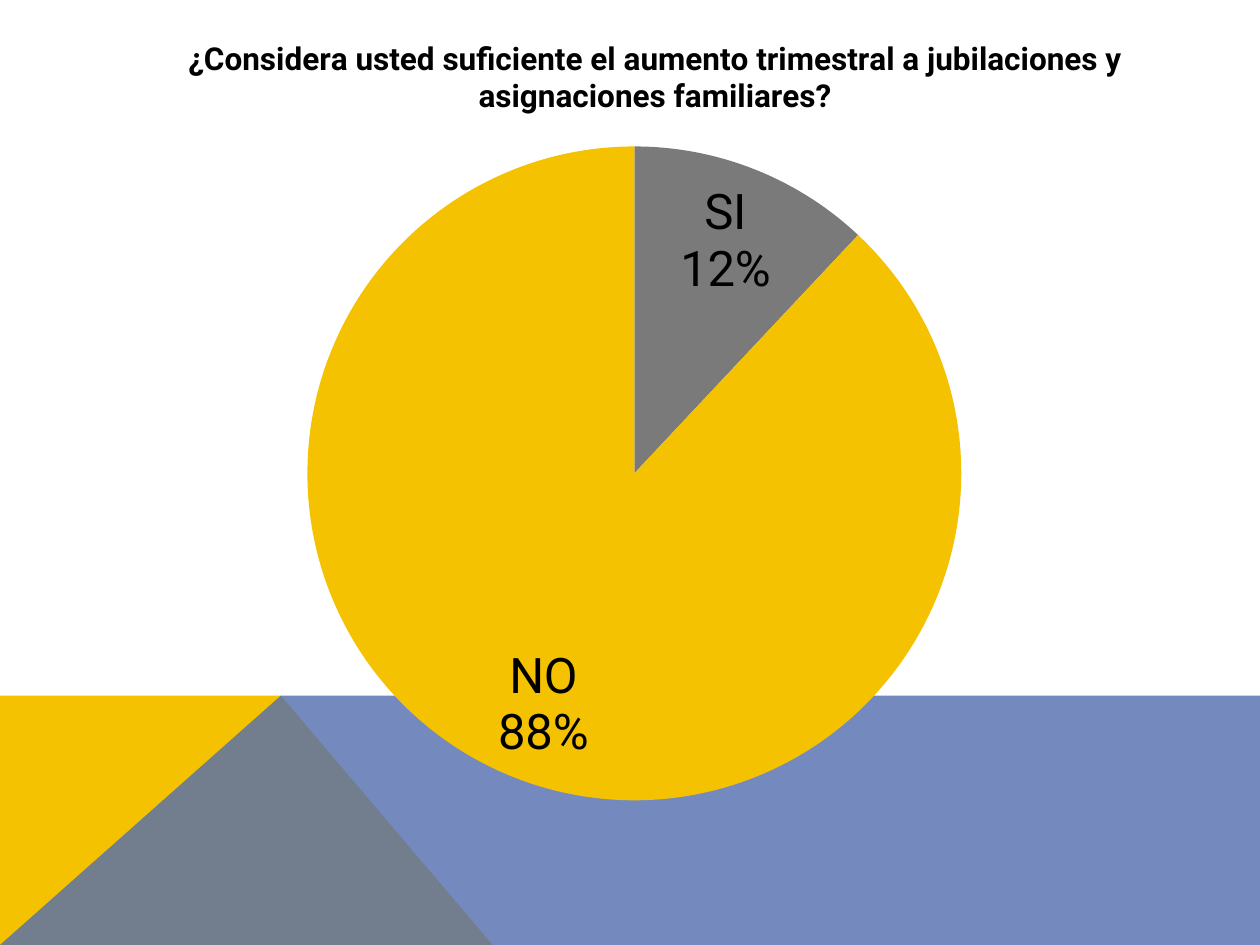
from lxml import etree
from pptx import Presentation
from pptx.chart.data import CategoryChartData
from pptx.dml.color import RGBColor
from pptx.enum.chart import XL_CHART_TYPE, XL_LABEL_POSITION
from pptx.oxml.ns import qn
from pptx.util import Pt

PIE = XL_CHART_TYPE.PIE
BEST_FIT = XL_LABEL_POSITION.BEST_FIT
WIDTH, HEIGHT = 720, 540
BAND_TOP, PEAK, BASE_END = 397.5, 160.5, 281.5
YELLOW, GRAY, BLUE, BLACK = "F5C201", "7A7A7A", "526DB0", "000000"
FONT = "Roboto"
QUESTION = ("¿Considera usted suficiente el aumento trimestral a jubilaciones y "
            "asignaciones familiares?")
ANSWERS = [("SI", 12, GRAY), ("NO", 88, YELLOW)]


def rgb(value):
    """Turn a hex string into a colour."""
    return RGBColor.from_string(value)


def style_font(font, size, color=BLACK, bold=False):
    """Set the typeface, size, colour and weight of a font."""
    font.name, font.size, font.bold = FONT, Pt(size), bold
    font.color.rgb = rgb(color)


def write_text(frame, text, **style):
    """Write one formatted run into a text frame."""
    run = frame.paragraphs[0].add_run()
    run.text = text
    style_font(run.font, **style)


def add_polygon(slide, points, color, alpha=None):
    """Draw a closed, borderless polygon, optionally translucent."""
    corners = [(Pt(x), Pt(y)) for x, y in points]
    builder = slide.shapes.build_freeform(*corners[0])
    builder.add_line_segments(corners[1:], close=True)
    polygon = builder.convert_to_shape()
    polygon.shadow.inherit = False
    polygon.line.fill.background()
    polygon.fill.solid()
    polygon.fill.fore_color.rgb = rgb(color)
    if alpha is not None:
        solid = polygon.fill._xPr.find(qn("a:solidFill"))
        etree.SubElement(solid[0], qn("a:alpha"), val=str(alpha * 1000))


def place(parent, index, **settings):
    """Give a chart part a manual layout in fractions of the chart."""
    for old in parent.findall(qn("c:layout")):
        parent.remove(old)
    layout = etree.Element(qn("c:layout"))
    manual = etree.SubElement(layout, qn("c:manualLayout"))
    for key, value in settings.items():
        etree.SubElement(manual, qn(f"c:{key}"), val=str(value))
    parent.insert(index, layout)


def add_labels(plot):
    """Show the answer above its percentage inside each slice."""
    plot.has_data_labels = True
    labels = plot.data_labels
    style_font(labels.font, size=28)
    labels.show_category_name = labels.show_percentage = True
    labels.show_value = False
    labels.position = BEST_FIT
    separator = etree.Element(qn("c:separator"))
    separator.text = "\n"
    labels._element.find(qn("c:showBubbleSize")).addnext(separator)


def add_answer_pie(slide):
    """Add the pie of answers with the question as its title."""
    data = CategoryChartData(number_format="0")
    data.categories = [answer for answer, _, _ in ANSWERS]
    data.add_series("Series 1", [share for _, share, _ in ANSWERS])
    chart = slide.shapes.add_chart(PIE, 0, 0, Pt(WIDTH), Pt(HEIGHT), data).chart
    style_font(chart.font, size=10)
    chart.has_legend = False
    chart.has_title = True
    title = chart.chart_title
    write_text(title.text_frame, QUESTION, size=18, bold=True)
    title.include_in_layout = False
    place(title._element, 1, xMode="edge", yMode="edge", x=0.145, y=0.034)
    plot = chart.plots[0]
    plot.vary_by_categories = True
    for index, (_, _, color) in enumerate(ANSWERS):
        slice_format = plot.series[0].points[index].format
        slice_format.fill.solid()
        slice_format.fill.fore_color.rgb = rgb(color)
        slice_format.line.fill.background()
    add_labels(plot)
    plot_area = chart._chartSpace.chart.plotArea
    place(plot_area, 0, layoutTarget="inner", xMode="edge", yMode="edge",
          x=0.115, y=0.155, w=0.777, h=0.692)


def main():
    """Build the survey slide and save it."""
    deck = Presentation()
    deck.slide_width, deck.slide_height = Pt(WIDTH), Pt(HEIGHT)
    slide = deck.slides.add_slide(deck.slide_layouts[6])
    add_polygon(slide, [(0, HEIGHT), (0, BAND_TOP), (PEAK, BAND_TOP),
                        (BASE_END, HEIGHT)], YELLOW)
    add_polygon(slide, [(0, HEIGHT), (PEAK, BAND_TOP), (WIDTH, BAND_TOP),
                        (WIDTH, HEIGHT)], BLUE, alpha=80)
    add_answer_pie(slide)
    deck.save("out.pptx")


if __name__ == "__main__":
    main()
